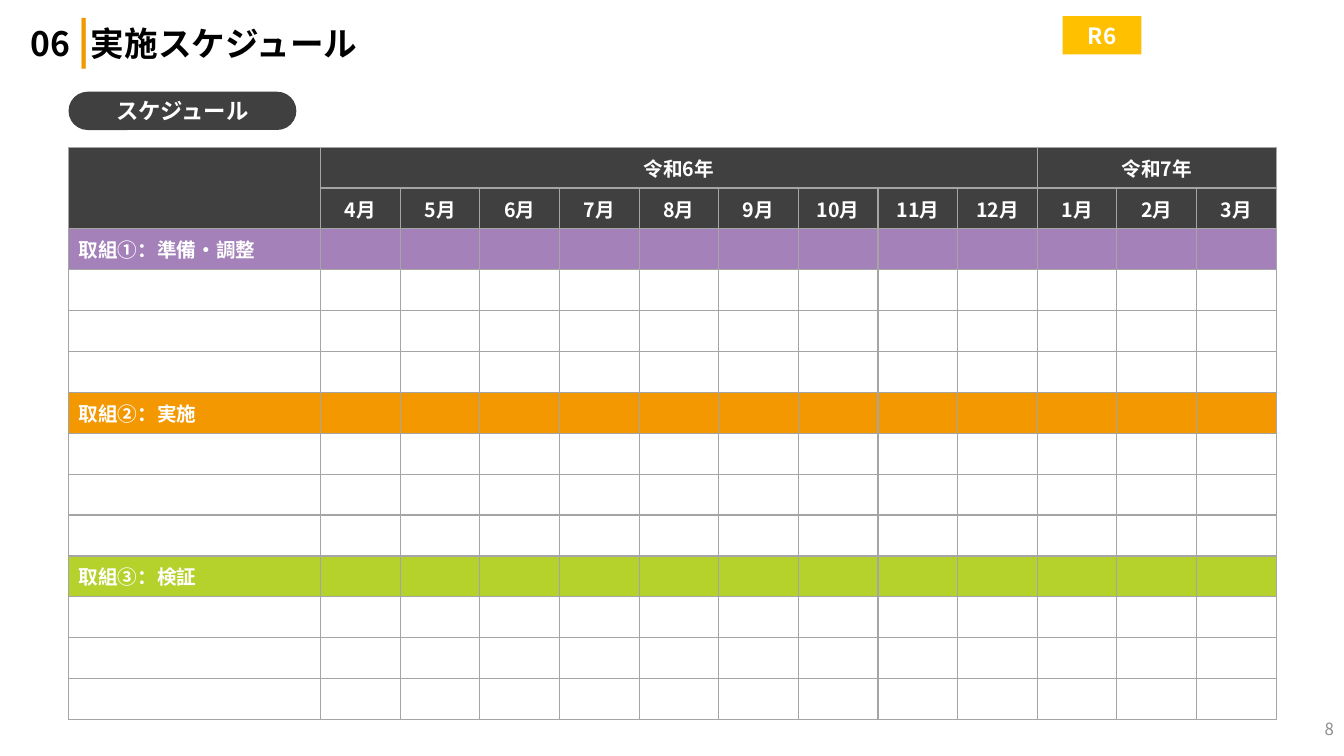
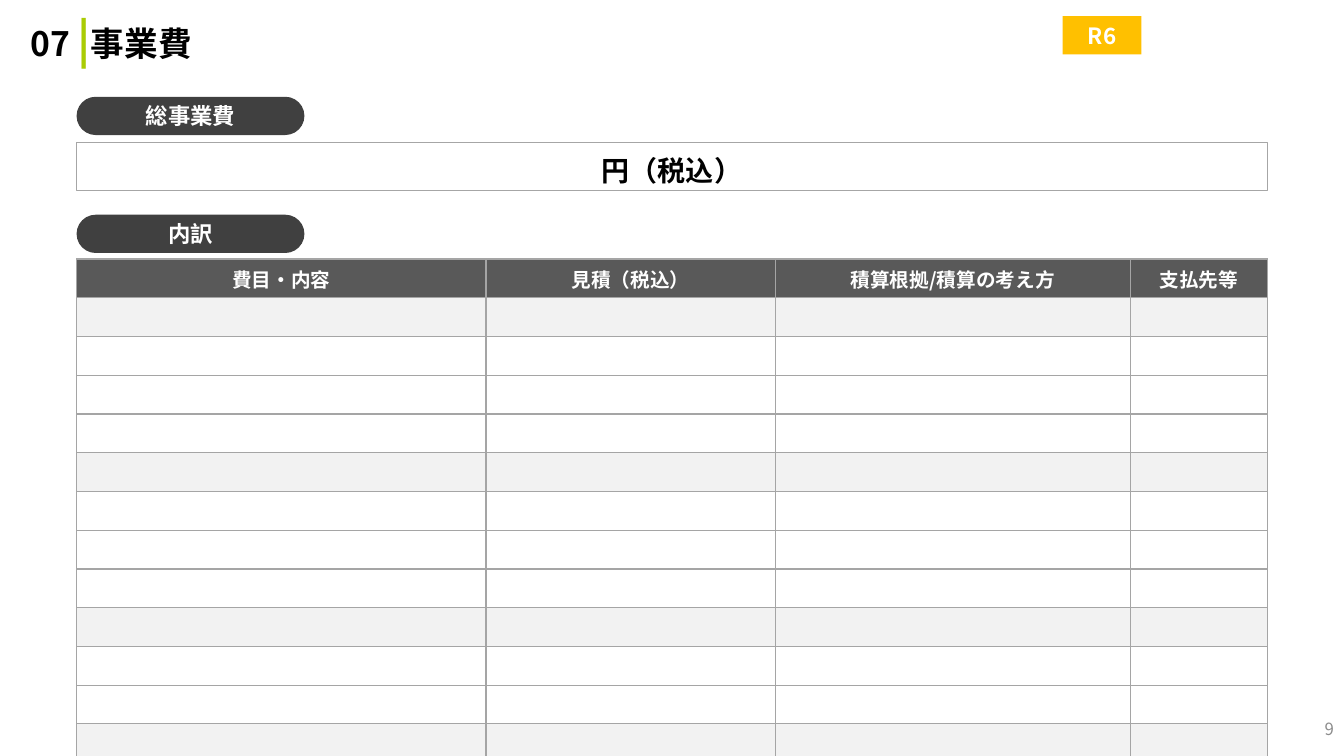
from pptx import Presentation
from pptx.dml.color import RGBColor
from pptx.enum.shapes import MSO_SHAPE
from pptx.enum.text import MSO_ANCHOR, MSO_AUTO_SIZE, PP_ALIGN
from pptx.oxml.ns import qn
from pptx.util import Inches, Pt
from lxml.etree import SubElement

FONT = "Noto Sans CJK JP"
COLORS = {
    "text": "000000",
    "white": "FFFFFF",
    "label": "404040",
    "header": "595959",
    "band": "F2F2F2",
    "grid": "A5A5A5",
    "frame": "A6A6A6",
    "number": "8C8C8C",
    "year": "FFC000",
    "orange bar": "F29800",
    "green bar": "AACC04",
    "purple": "A481B9",
    "orange": "F39801",
    "green": "B5D12C",
}


def color(name):
    """Return the named palette colour."""
    return RGBColor.from_string(COLORS[name])


def set_typeface(font):
    """Set the typeface for Latin and East Asian text."""
    font.name = FONT
    SubElement(font._element, qn("a:ea"), typeface=FONT)


def write(paragraph, text, size, ink, align=PP_ALIGN.CENTER, bold=True):
    """Write one evenly formatted paragraph."""
    paragraph.text = text
    paragraph.alignment = align
    paragraph.font.size = Pt(size)
    paragraph.font.bold = bold
    paragraph.font.color.rgb = color(ink)
    set_typeface(paragraph.font)


def add_label(page, text, left, top, width=2.26, fill="label", rounding=0.5):
    """Add a filled label with centred white text."""
    box = page.shapes.add_shape(
        MSO_SHAPE.ROUNDED_RECTANGLE,
        Inches(left), Inches(top), Inches(width), Inches(0.38),
    )
    box.adjustments[0] = rounding
    box.shadow.inherit = False
    box.fill.solid()
    box.fill.fore_color.rgb = color(fill)
    box.line.fill.background()
    box.text_frame.vertical_anchor = MSO_ANCHOR.MIDDLE
    write(box.text_frame.paragraphs[0], text, 16, "white")


def add_amount(page, text, left, top, width, height):
    """Add the outlined box for the total amount."""
    box = page.shapes.add_shape(
        MSO_SHAPE.RECTANGLE,
        Inches(left), Inches(top), Inches(width), Inches(height),
    )
    box.shadow.inherit = False
    box.fill.background()
    box.line.color.rgb = color("frame")
    box.line.width = Pt(0.75)
    box.text_frame.vertical_anchor = MSO_ANCHOR.TOP
    paragraph = box.text_frame.paragraphs[0]
    paragraph.line_spacing = 1.2
    paragraph.space_after = Pt(6)
    write(paragraph, text, 20, "text")


def set_title(page, number, text, bar):
    """Fill the title with a number, a coloured bar and the heading."""
    title = page.shapes.title
    title.left, title.top = Inches(0.2), Inches(0.09)
    title.width, title.height = Inches(10.9), Inches(0.66)
    frame = title.text_frame
    frame.auto_size = MSO_AUTO_SIZE.NONE
    frame.vertical_anchor = MSO_ANCHOR.MIDDLE
    paragraph = frame.paragraphs[0]
    paragraph.alignment = PP_ALIGN.LEFT
    paragraph.line_spacing = 0.9
    paragraph.font.bold = True
    set_typeface(paragraph.font)
    parts = ((f"{number} ", 24, "text"), ("|", 32, bar), (text, 24, "text"))
    for part, size, ink in parts:
        span = paragraph.add_run()
        span.text = part
        span.font.size = Pt(size)
        span.font.color.rgb = color(ink)


def add_page(deck, number, title, bar, page_number):
    """Add a page with its title, year label and page number."""
    page = deck.slides.add_slide(deck.slide_layouts[5])
    set_title(page, number, title, bar)
    add_label(page, "R6", 10.54, 0.16, 0.78, "year", 0)
    box = page.shapes.add_textbox(
        Inches(10.33), Inches(7.11), Inches(3), Inches(0.25)
    )
    box.text_frame.word_wrap = True
    box.text_frame.vertical_anchor = MSO_ANCHOR.MIDDLE
    write(box.text_frame.paragraphs[0], str(page_number), 12, "number",
          PP_ALIGN.RIGHT, False)
    return page


def format_cell(cell, text, fill, align):
    """Give a cell its borders, fill and text."""
    properties = cell._tc.get_or_add_tcPr()
    for side in ("a:lnL", "a:lnR", "a:lnT", "a:lnB"):
        line = SubElement(properties, qn(side), w=str(Pt(1)))
        solid = SubElement(line, qn("a:solidFill"))
        SubElement(solid, qn("a:srgbClr"), val=COLORS["grid"])
    if fill:
        cell.fill.solid()
        cell.fill.fore_color.rgb = color(fill)
    else:
        cell.fill.background()
    cell.vertical_anchor = MSO_ANCHOR.MIDDLE
    paragraph = cell.text_frame.paragraphs[0]
    if text:
        write(paragraph, text, 14, "white", align)
    else:
        ending = SubElement(paragraph._p, qn("a:endParaRPr"), sz="1400")
        for script in ("a:latin", "a:ea"):
            SubElement(ending, qn(script), typeface=FONT)


def add_grid(page, left, top, height, widths, rows):
    """Add a table from rows of (texts, fill, alignment)."""
    table = page.shapes.add_table(
        len(rows), len(widths),
        Inches(left), Inches(top), Inches(sum(widths)), Inches(height),
    ).table
    table.first_row = table.horz_banding = False
    for column, width in zip(table.columns, widths):
        column.width = Inches(width)
    for row, (texts, fill, align) in zip(table.rows, rows):
        for index, cell in enumerate(row.cells):
            text = texts[index] if index < len(texts) else ""
            format_cell(cell, text, fill, align)
    return table


def add_schedule_page(deck):
    """Build the schedule page."""
    page = add_page(deck, "06", "実施スケジュール", "orange bar", 8)
    add_label(page, "スケジュール", 0.68, 0.91)
    years = [""] * 13
    years[1], years[10] = "令和6年", "令和7年"
    months = [""] + [f"{(index + 3) % 12 + 1}月" for index in range(12)]
    rows = [(texts, "label", PP_ALIGN.CENTER) for texts in (years, months)]
    phases = (
        ("取組①：準備・調整", "purple"),
        ("取組➁：実施", "orange"),
        ("取組③：検証", "green"),
    )
    for phase, fill in phases:
        rows.append(([phase], fill, PP_ALIGN.LEFT))
        rows.extend([([], None, PP_ALIGN.LEFT)] * 3)
    table = add_grid(page, 0.68, 1.46, 5.68, [2.5] + [0.79] * 12, rows)
    table.cell(0, 0).merge(table.cell(1, 0))
    table.cell(0, 1).merge(table.cell(0, 9))
    table.cell(0, 10).merge(table.cell(0, 12))


def add_cost_page(deck):
    """Build the project cost page."""
    page = add_page(deck, "07", "事業費", "green bar", 9)
    headings = ["費目・内容", "見積（税込）", "積算根拠/積算の考え方", "支払先等"]
    rows = [(headings, "header", PP_ALIGN.CENTER)]
    for index in range(1, 14):
        fill = "band" if index in (1, 5, 9, 12) else None
        rows.append(([], fill, PP_ALIGN.LEFT))
    add_label(page, "総事業費", 0.76, 0.96)
    add_amount(page, "円（税込）", 0.76, 1.41, 11.81, 0.48)
    add_label(page, "内訳", 0.76, 2.13)
    add_grid(page, 0.76, 2.57, 5.38, [4.06, 2.87, 3.52, 1.36], rows)


def main():
    """Build and save the deck."""
    deck = Presentation()
    deck.slide_width, deck.slide_height = Inches(13.33), Inches(7.5)
    add_schedule_page(deck)
    add_cost_page(deck)
    deck.save("out.pptx")


if __name__ == "__main__":
    main()
